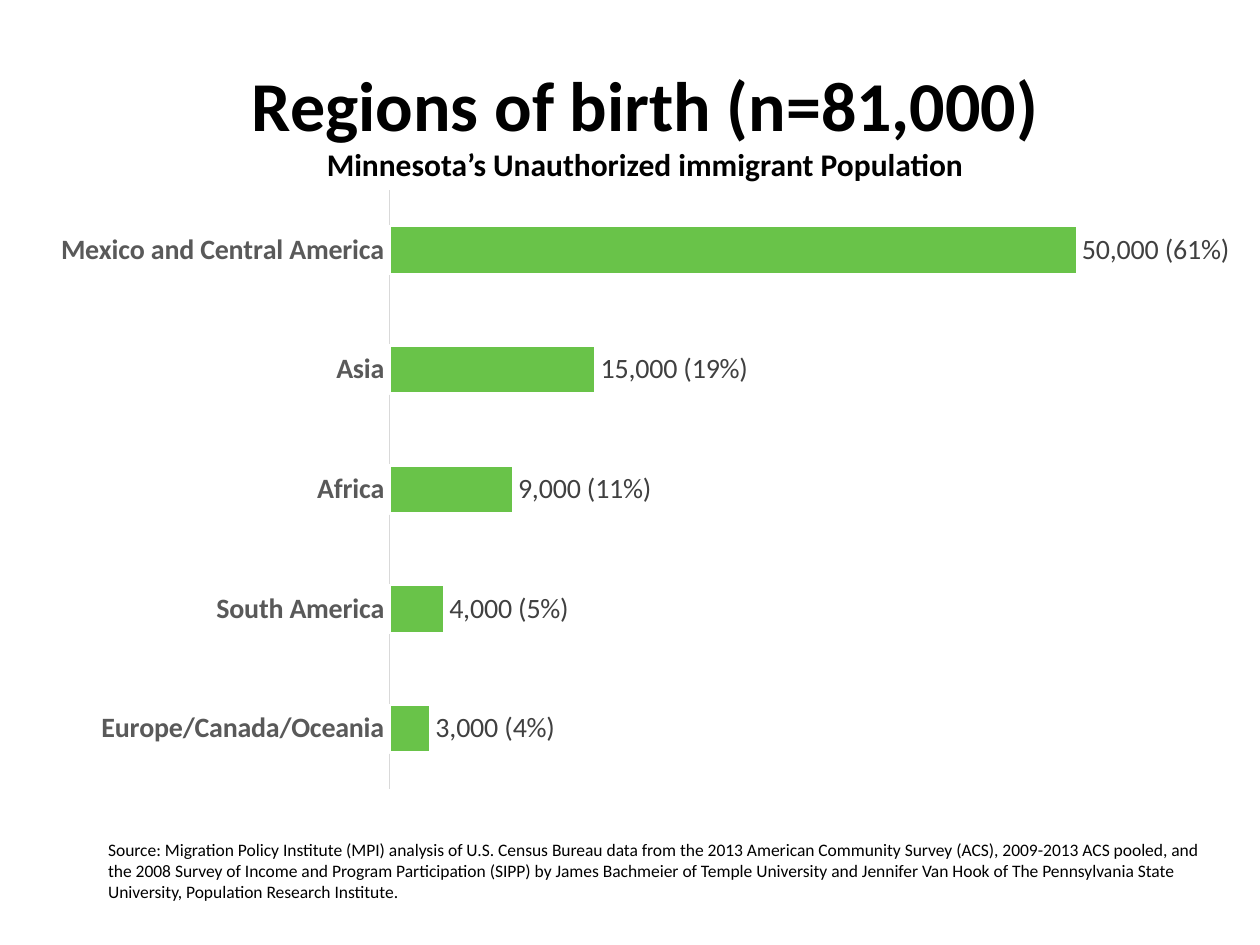
from lxml import etree
from pptx import Presentation
from pptx.chart.data import CategoryChartData
from pptx.dml.color import RGBColor
from pptx.enum.chart import XL_CHART_TYPE as ChartType
from pptx.enum.chart import XL_TICK_MARK as TickMark
from pptx.enum.text import MSO_ANCHOR as Anchor
from pptx.enum.text import MSO_AUTO_SIZE as AutoSize
from pptx.enum.text import PP_ALIGN as Align
from pptx.oxml.ns import qn
from pptx.util import Inches, Pt

BLACK = RGBColor(0x00, 0x00, 0x00)
WHITE = RGBColor(0xFF, 0xFF, 0xFF)
GREEN = RGBColor(0x69, 0xC3, 0x49)
REGION_GRAY = RGBColor(0x59, 0x59, 0x59)
LABEL_GRAY = RGBColor(0x40, 0x40, 0x40)
AXIS_GRAY = RGBColor(0xD9, 0xD9, 0xD9)

CHART_WIDTH, CHART_HEIGHT = Inches(9.61), Inches(5.05)
NUMBER_FORMAT = "#,##0"
REGIONS = [
    ("Mexico and Central America", 50000, "61%"),
    ("Asia", 15000, "19%"),
    ("Africa", 9000, "11%"),
    ("South America", 4000, "5%"),
    ("Europe/Canada/Oceania", 3000, "4%"),
]
SOURCE = (
    "Source: Migration Policy Institute (MPI) analysis of U.S. Census Bureau data "
    "from the 2013 American Community Survey (ACS), 2009-2013 ACS pooled, and the "
    "2008 Survey of Income and Program Participation (SIPP) by James Bachmeier of "
    "Temple University and Jennifer Van Hook of The Pennsylvania State University, "
    "Population Research Institute."
)


def format_font(font, size, color=BLACK, bold=False):
    font.name = "Calibri"
    font.size = Pt(size)
    font.bold = bold
    font.color.rgb = color


def add_text(paragraph, text, **font_format):
    run = paragraph.add_run()
    run.text = text
    format_font(run.font, **font_format)


def add_title(slide):
    title = slide.shapes.title
    title.left, title.top = Inches(0.62), Inches(0.44)
    title.width, title.height = Inches(9), Inches(1.26)
    title.text_frame.vertical_anchor = Anchor.MIDDLE
    title.text_frame.margin_bottom = Inches(0.25)
    heading = title.text_frame.paragraphs[0]
    heading.alignment = Align.CENTER
    add_text(heading, "Regions of birth (n=81,000)", size=40, bold=True)
    heading.add_line_break()
    add_text(heading, "Minnesota’s Unauthorized immigrant Population", size=18, bold=True)


def place_plot(chart, left, top, width, height):
    plot_area = chart.plots[0]._element.getparent()
    for old_layout in plot_area.findall(qn("c:layout")):
        plot_area.remove(old_layout)
    layout = etree.Element(qn("c:layout"))
    manual = etree.SubElement(layout, qn("c:manualLayout"))
    settings = {"layoutTarget": "inner", "xMode": "edge", "yMode": "edge",
                "x": left / CHART_WIDTH, "y": top / CHART_HEIGHT,
                "w": width / CHART_WIDTH, "h": height / CHART_HEIGHT}
    for tag, value in settings.items():
        etree.SubElement(manual, qn(f"c:{tag}")).set("val", str(value))
    plot_area.insert(0, layout)


def format_axes(chart):
    region_axis = chart.category_axis
    region_axis.reverse_order = True
    region_axis.major_tick_mark = TickMark.NONE
    region_axis.minor_tick_mark = TickMark.NONE
    region_axis.format.line.color.rgb = AXIS_GRAY
    region_axis.format.line.width = Pt(0.75)
    format_font(region_axis.tick_labels.font, 16, REGION_GRAY, bold=True)

    people_axis = chart.value_axis
    people_axis.has_major_gridlines = False
    people_axis.tick_labels.number_format = NUMBER_FORMAT
    people_axis.tick_labels.number_format_is_linked = False
    people_axis.visible = False


def label_bars(bars):
    labels = bars.data_labels
    labels.show_value = True
    labels.number_format = NUMBER_FORMAT
    labels.number_format_is_linked = False
    format_font(labels.font, 16, LABEL_GRAY)
    for index, (_, people, share) in enumerate(REGIONS):
        label = bars.points[index].data_label.text_frame.paragraphs[0]
        add_text(label, f"{people:,} ({share})", size=16, color=LABEL_GRAY)


def add_region_chart(slide):
    data = CategoryChartData(number_format=NUMBER_FORMAT)
    data.categories = [region for region, _, _ in REGIONS]
    data.add_series("Series 1", [people for _, people, _ in REGIONS])
    chart = slide.shapes.add_chart(
        ChartType.BAR_CLUSTERED, Inches(0.2), Inches(1.37),
        CHART_WIDTH, CHART_HEIGHT, data).chart
    chart.has_title = False
    chart.has_legend = False
    format_font(chart.font, 10)
    place_plot(chart, Inches(2.89), Inches(0.14), Inches(6.55), Inches(4.75))
    format_axes(chart)

    plot = chart.plots[0]
    plot.gap_width = 150
    plot.vary_by_categories = False
    bars = plot.series[0]
    bars.format.fill.solid()
    bars.format.fill.fore_color.rgb = GREEN
    bars.format.line.color.rgb = WHITE
    bars.format.line.width = Pt(1.5)
    label_bars(bars)


def add_source(slide):
    source = slide.shapes.add_textbox(
        Inches(0.76), Inches(6.61), Inches(8.86), Inches(0.61)).text_frame
    source.word_wrap = True
    source.auto_size = AutoSize.SHAPE_TO_FIT_TEXT
    add_text(source.paragraphs[0], SOURCE, size=10)


def main():
    deck = Presentation()
    deck.slide_width, deck.slide_height = Inches(10), Inches(7.5)
    slide = deck.slides.add_slide(deck.slide_layouts[5])
    add_title(slide)
    add_region_chart(slide)
    add_source(slide)
    deck.save("out.pptx")


if __name__ == "__main__":
    main()
